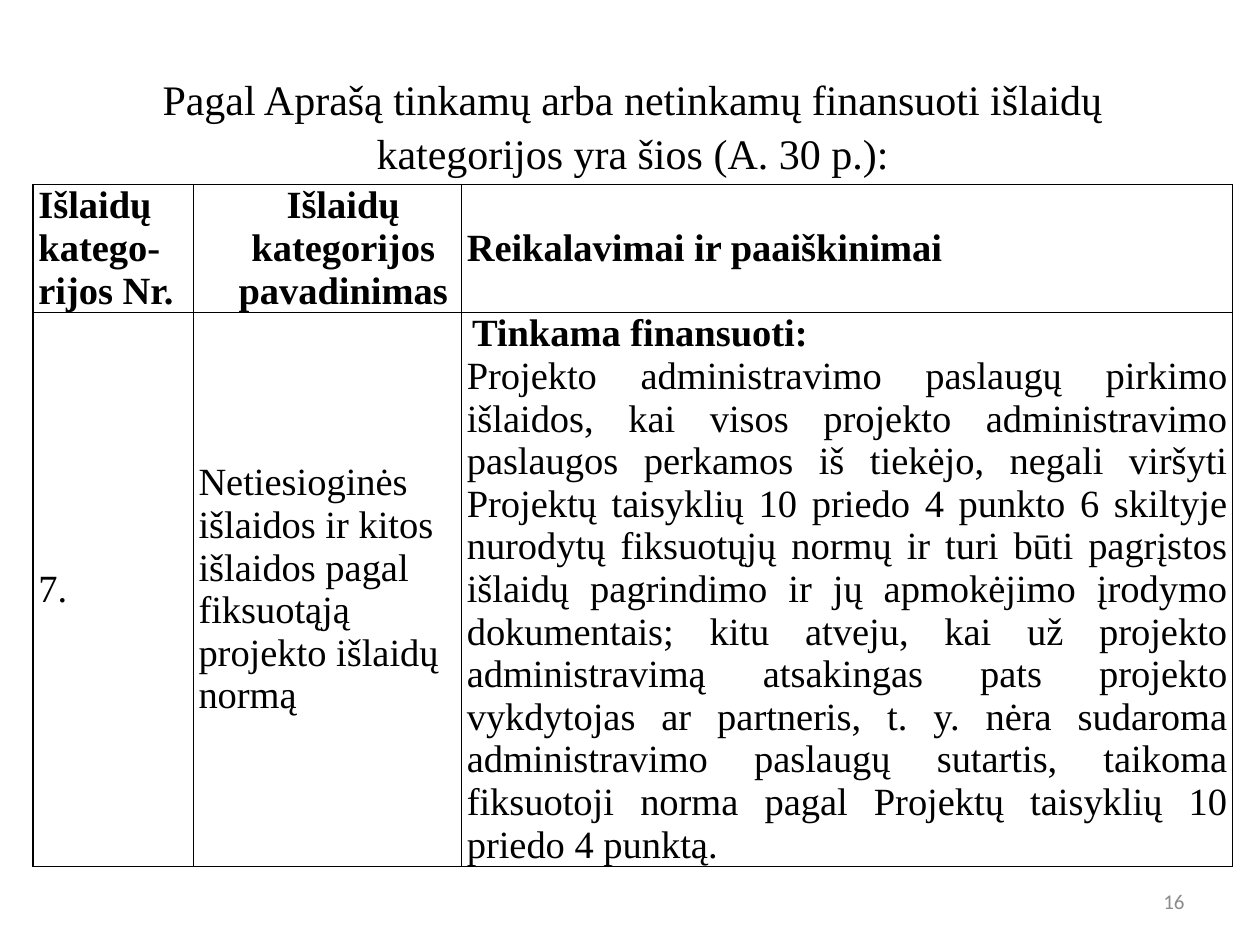
from lxml import etree
from pptx import Presentation
from pptx.dml.color import RGBColor
from pptx.enum import text as t
from pptx.oxml.ns import qn
from pptx.util import Pt

SERIF = "Times New Roman"
BLACK, WHITE, GREY = "000000", "FFFFFF", "8C8C8C"
LEFT, CENTER, RIGHT, JUSTIFY = (
    t.PP_ALIGN.LEFT, t.PP_ALIGN.CENTER, t.PP_ALIGN.RIGHT, t.PP_ALIGN.JUSTIFY)

TITLE = "Pagal Aprašą tinkamų arba netinkamų finansuoti išlaidų kategorijos yra šios (A. 30 p.):"
REQUIREMENTS = (
    "Projekto administravimo paslaugų pirkimo išlaidos, kai visos projekto "
    "administravimo paslaugos perkamos iš tiekėjo, negali viršyti Projektų taisyklių "
    "10 priedo 4 punkto 6 skiltyje nurodytų fiksuotųjų normų ir turi būti pagrįstos "
    "išlaidų pagrindimo ir jų apmokėjimo įrodymo dokumentais; kitu atveju, kai už "
    "projekto administravimą atsakingas pats projekto vykdytojas ar partneris, t. y. "
    "nėra sudaroma administravimo paslaugų sutartis, taikoma fiksuotoji norma pagal "
    "Projektų taisyklių 10 priedo 4 punktą."
)
# Each paragraph: text, bold, alignment, left margin, first-line indent
ROWS = [
    [
        [("Išlaidų katego-rijos Nr.", True, LEFT, 0, 0)],
        [("Išlaidų kategorijos pavadinimas", True, CENTER, 18, 0)],
        [("Reikalavimai ir paaiškinimai", True, JUSTIFY, 0, 0)],
    ],
    [
        [("7.", False, LEFT, 0, 0)],
        [("Netiesioginės išlaidos ir kitos išlaidos pagal fiksuotąją projekto išlaidų normą",
          False, LEFT, 0, 0)],
        [("Tinkama finansuoti:", True, JUSTIFY, 0, 3),
         (REQUIREMENTS, False, JUSTIFY, 0, 0)],
    ],
]
COLUMN_WIDTHS = [91.5, 153.3, 440.6]
ROW_HEIGHTS = [73, 316.6]


def color(value):
    return RGBColor.from_string(value)


def add_run(paragraph, content, size, font_name, ink, bold=False):
    run = paragraph.add_run()
    run.text = content
    run.font.size = Pt(size)
    run.font.name = font_name
    run.font.bold = bold
    run.font.color.rgb = color(ink)


def add_borders(cell):
    properties = cell._tc.get_or_add_tcPr()
    for side in ("lnL", "lnR", "lnT", "lnB"):
        line = etree.SubElement(properties, qn(f"a:{side}"), w=str(Pt(1)))
        fill = etree.SubElement(line, qn("a:solidFill"))
        etree.SubElement(fill, qn("a:srgbClr"), val=BLACK)


def fill_cell(cell, paragraphs):
    add_borders(cell)
    cell.fill.solid()
    cell.fill.fore_color.rgb = color(WHITE)
    cell.vertical_anchor = t.MSO_ANCHOR.MIDDLE
    cell.margin_left = cell.margin_right = Pt(3)
    cell.margin_top = cell.margin_bottom = Pt(0)
    for index, (content, bold, alignment, margin, indent) in enumerate(paragraphs):
        frame = cell.text_frame
        paragraph = frame.add_paragraph() if index else frame.paragraphs[0]
        paragraph.alignment = alignment
        properties = paragraph._p.get_or_add_pPr()
        properties.set("marL", str(Pt(margin)))
        properties.set("indent", str(Pt(indent)))
        add_run(paragraph, content, 22, SERIF, BLACK, bold)


def add_title(slide):
    title = slide.shapes.title
    title.left, title.top, title.width, title.height = Pt(37.5), Pt(26), Pt(648), Pt(90)
    title.text_frame.vertical_anchor = t.MSO_ANCHOR.MIDDLE
    paragraph = title.text_frame.paragraphs[0]
    paragraph.alignment = CENTER
    paragraph.line_spacing = 1.07
    add_run(paragraph, TITLE, 24, SERIF, BLACK)


def add_expense_table(slide):
    table = slide.shapes.add_table(
        len(ROWS), len(COLUMN_WIDTHS), Pt(19), Pt(105.5),
        Pt(sum(COLUMN_WIDTHS)), Pt(sum(ROW_HEIGHTS))).table
    for column, width in zip(table.columns, COLUMN_WIDTHS):
        column.width = Pt(width)
    for row, height, contents in zip(table.rows, ROW_HEIGHTS, ROWS):
        row.height = Pt(height)
        for cell, paragraphs in zip(row.cells, contents):
            fill_cell(cell, paragraphs)


def add_page_number(slide):
    box = slide.shapes.add_textbox(Pt(516), Pt(500.5), Pt(168), Pt(28.75))
    box.text_frame.word_wrap = True
    box.text_frame.vertical_anchor = t.MSO_ANCHOR.MIDDLE
    paragraph = box.text_frame.paragraphs[0]
    paragraph.alignment = RIGHT
    add_run(paragraph, "16", 12, "Calibri", GREY)


def main():
    presentation = Presentation()
    presentation.slide_width, presentation.slide_height = Pt(720), Pt(540)
    slide = presentation.slides.add_slide(presentation.slide_layouts[5])
    add_title(slide)
    add_expense_table(slide)
    add_page_number(slide)
    presentation.save("out.pptx")


if __name__ == "__main__":
    main()
